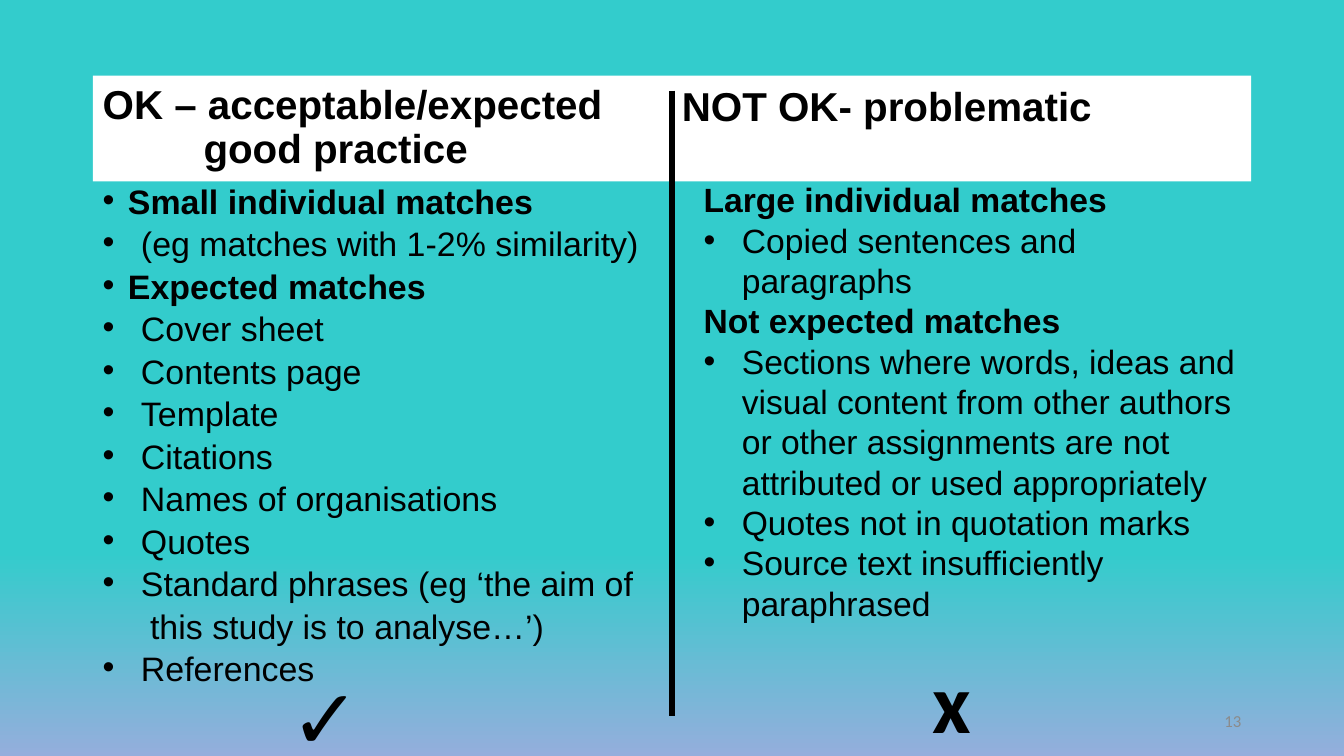
import dataclasses

import pptx
import pptx.dml.color
import pptx.enum.dml
import pptx.enum.shapes
import pptx.enum.text
import pptx.oxml
import pptx.oxml.ns
import pptx.util

Inches = pptx.util.Inches
Pt = pptx.util.Pt
Anchor = pptx.enum.text.MSO_ANCHOR
Align = pptx.enum.text.PP_ALIGN


@dataclasses.dataclass(frozen=True)
class Theme:
    teal: str = "33CCCC"
    blue: str = "94AEDC"
    white: str = "FFFFFF"
    ink: str = "000000"
    grey: str = "8B8B8B"
    font: str = "Arial"
    symbol_font: str = "Calibri"
    heading: float = 28.8
    list_left: float = 24.2
    list_right: float = 24
    symbol: float = 60
    number: float = 12
    divider: float = 4.5


THEME = Theme()
WIDTH, HEIGHT = 13.33, 7.5
MARGIN = 0.92
CONTENT = WIDTH - 2 * MARGIN
MIDDLE = WIDTH / 2
HANG = 0.38
HEADING_HANG = 0.25

OK_ITEMS = [
    ("Small individual matches", True, HEADING_HANG, True),
    ("(eg matches with 1-2% similarity)", False, HANG, True),
    ("Expected matches", True, HEADING_HANG, True),
    *[(item, False, HANG, True) for item in (
        "Cover sheet", "Contents page", "Template", "Citations",
        "Names of organisations", "Quotes",
        "Standard phrases (eg ‘the aim of")],
    ("this study is to analyse…’)", False, 0.47, False),
    ("References", False, HANG, True),
]
NOT_OK_ITEMS = [
    ("Large individual matches", True, 0, False),
    ("Copied sentences and paragraphs", False, HANG, True),
    ("Not expected matches", True, 0, False),
    *[(item, False, HANG, True) for item in (
        "Sections where words, ideas and visual content from other authors "
        "or other assignments are not attributed or used appropriately",
        "Quotes not in quotation marks",
        "Source text insufficiently paraphrased")],
]


def rgb(value):
    return pptx.dml.color.RGBColor.from_string(value)


def style(para, size, bold=False, color=THEME.ink, font=THEME.font):
    for span in para.runs:
        span.font.size = Pt(size)
        span.font.bold = bold
        span.font.name = font
        span.font.color.rgb = rgb(color)


def indent(para, left, bullet=False):
    props = para._p.get_or_add_pPr()
    props.set("marL", str(Inches(left)))
    props.set("indent", str(-Inches(left) if bullet else 0))
    if bullet:
        mark = pptx.oxml.ns.nsdecls("a")
        props.append(pptx.oxml.parse_xml(f'<a:buFont {mark} typeface="Arial"/>'))
        props.append(pptx.oxml.parse_xml(f'<a:buChar {mark} char="•"/>'))


def add_text(page, place, lines):
    box = page.shapes.add_textbox(*map(Inches, place))
    box.text_frame.word_wrap = True
    box.text_frame.text = "\n".join(lines)
    return box.text_frame


def add_list(page, place, items, size, line=1.0, before=0):
    frame = add_text(page, place, [item[0] for item in items])
    for para, (_, bold, left, bullet) in zip(frame.paragraphs, items):
        para.line_spacing = line
        para.space_before = Pt(before)
        indent(para, left, bullet)
        style(para, size, bold)


def add_symbol(page, place, mark, bold):
    para = add_text(page, place, [mark]).paragraphs[0]
    style(para, THEME.symbol, bold, font=THEME.symbol_font)


def add_number(page, place, number):
    frame = add_text(page, place, [number])
    frame.vertical_anchor = Anchor.MIDDLE
    frame.paragraphs[0].alignment = Align.RIGHT
    style(frame.paragraphs[0], THEME.number, color=THEME.grey, font=THEME.symbol_font)


def style_heading(para, left=0):
    para.alignment = Align.LEFT
    para.line_spacing = 0.9
    indent(para, left)
    style(para, THEME.heading, True)


def add_banner(page, place, lines, second_left):
    banner = page.shapes.add_shape(
        pptx.enum.shapes.MSO_SHAPE.RECTANGLE, *map(Inches, place))
    banner.shadow.inherit = False
    banner.fill.solid()
    banner.fill.fore_color.rgb = rgb(THEME.white)
    banner.line.fill.background()
    frame = banner.text_frame
    frame.word_wrap = True
    frame.vertical_anchor = Anchor.MIDDLE
    frame.text = "\n".join(lines)
    for para, left in zip(frame.paragraphs, (0, second_left)):
        style_heading(para, left)


def add_heading(page, place, heading):
    style_heading(add_text(page, place, [heading]).paragraphs[0])


def add_divider(page, x, top, bottom):
    line = page.shapes.add_connector(
        pptx.enum.shapes.MSO_CONNECTOR.STRAIGHT,
        *map(Inches, (x, top, x, bottom)))
    line.line.color.rgb = rgb(THEME.ink)
    line.line.width = Pt(THEME.divider)
    line._element.spPr.append(pptx.oxml.parse_xml(
        f'<a:effectLst {pptx.oxml.ns.nsdecls("a")}/>'))


def paint_background(page):
    fill = page.background.fill
    fill.gradient()
    fill.gradient_angle = 270
    stops = zip(fill.gradient_stops, ((0.73, THEME.teal), (1, THEME.blue)))
    for stop, (position, color) in stops:
        stop.position = position
        stop.color.rgb = rgb(color)


def main():
    deck = pptx.Presentation()
    deck.slide_width, deck.slide_height = Inches(WIDTH), Inches(HEIGHT)
    page = deck.slides.add_slide(deck.slide_layouts[6])
    paint_background(page)
    add_banner(page, (MARGIN, HEIGHT * 0.1, CONTENT, HEIGHT * 0.14),
               ["OK – acceptable/expected", "good practice"], second_left=1)
    add_heading(page, (MIDDLE, 0.81, CONTENT / 2, 0.5), "NOT OK- problematic")
    add_list(page, (MARGIN, 1.85, CONTENT, HEIGHT * 0.7), OK_ITEMS,
             THEME.list_left, line=0.7, before=10)
    add_list(page, (6.88, 1.73, 5.54, 4.54), NOT_OK_ITEMS, THEME.list_right)
    add_divider(page, MIDDLE, 0.9, 7.1)
    add_symbol(page, (2.78, 6.55, 0.42, 1.11), "✓", False)
    add_symbol(page, (9.15, 6.39, 0.5, 1.11), "x", True)
    add_number(page, (MARGIN + CONTENT - 3, 6.95, 3, 0.4), "13")
    deck.save("out.pptx")


if __name__ == "__main__":
    main()
